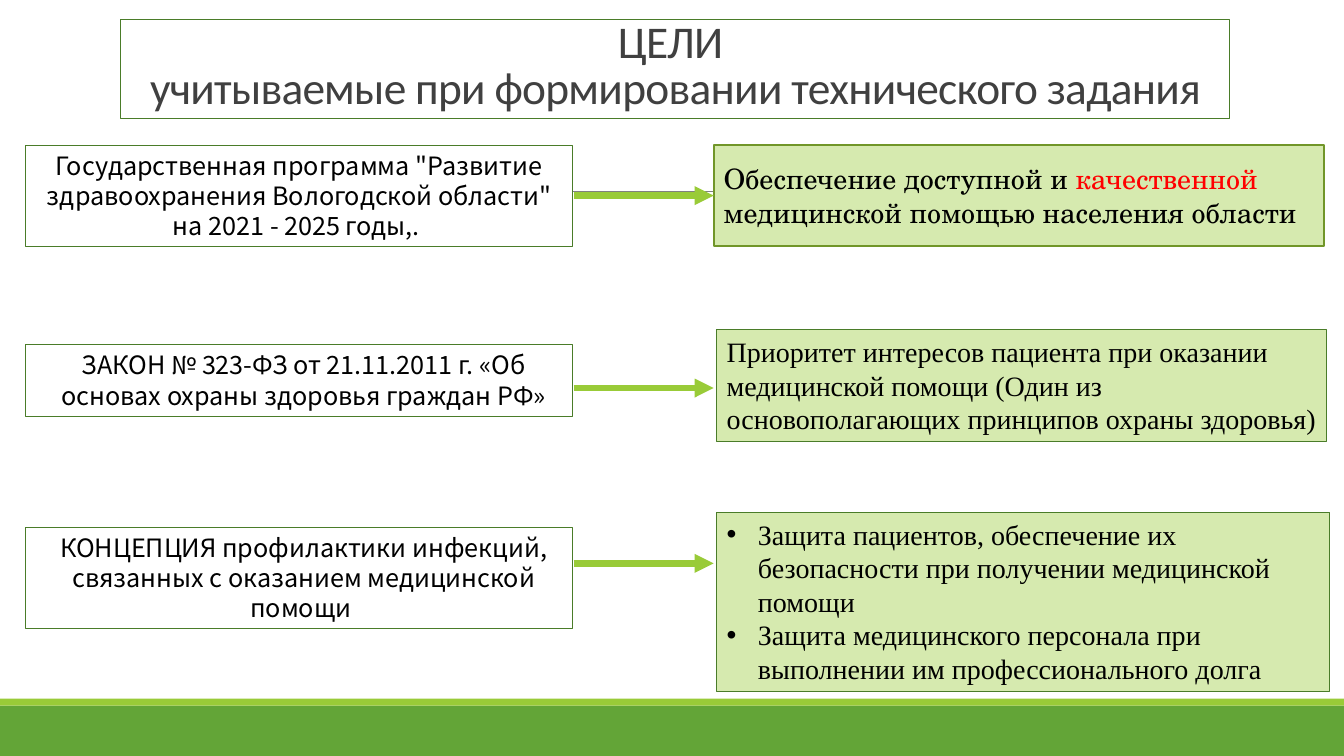
from pptx import Presentation, util as u
from pptx.dml.color import RGBColor
from pptx.enum import shapes, text
from pptx.oxml.ns import qn
from lxml import etree

GREEN = RGBColor(0x63, 0xA5, 0x37)
LIME = RGBColor(0x99, 0xCB, 0x38)
PALE = RGBColor(0xD6, 0xEA, 0xAF)
EDGE = RGBColor(0x4A, 0x7C, 0x29)
OLIVE = RGBColor(0x71, 0x96, 0x29)
GRAY = RGBColor(0x80, 0x80, 0x80)
DARK = RGBColor(0x40, 0x40, 0x40)
WHITE = RGBColor(0xFF, 0xFF, 0xFF)
BLACK = RGBColor(0, 0, 0)
RED = RGBColor(0xFF, 0, 0)

MID = text.MSO_ANCHOR.MIDDLE
TOP = text.MSO_ANCHOR.TOP
LOW = text.MSO_ANCHOR.BOTTOM
CENTER = text.PP_ALIGN.CENTER
LEFT = text.PP_ALIGN.LEFT

HEAD = {"name": "Calibri", "size": u.Pt(32.4)}
SANS = {"name": "Noto Sans CJK KR", "size": u.Pt(18)}
SERIF = {"name": "Times New Roman", "size": u.Pt(20)}
SCHOOL = {"name": "TeX Gyre Schola", "size": u.Pt(20)}
BREAK = (None, None)


class Page:
    """Draws styled elements on one slide, placed in percent of its size."""

    def __init__(self, deck):
        self.wide, self.high = deck.slide_width, deck.slide_height
        self.slide = deck.slides.add_slide(deck.slide_layouts[5])

    def x(self, share):
        return round(self.wide * share / 100)

    def y(self, share):
        return round(self.high * share / 100)

    def place(self, left, top, wide, high):
        return self.x(left), self.y(top), self.x(wide), self.y(high)

    def paint(self, shape, fill, edge, width):
        if fill is None:
            shape.fill.background()
        else:
            shape.fill.solid()
            shape.fill.fore_color.rgb = fill
        if edge is None:
            shape.line.fill.background()
        else:
            shape.line.color.rgb = edge
            shape.line.width = u.Pt(width)

    def label(self, shape, paras, font, align=LEFT, anchor=TOP):
        frame = shape.text_frame
        look = {"word_wrap": True, "auto_size": text.MSO_AUTO_SIZE.NONE, "vertical_anchor": anchor}
        for key, value in look.items():
            setattr(frame, key, value)
        for i, runs in enumerate(paras):
            para = frame.add_paragraph() if i else frame.paragraphs[0]
            para.alignment = align
            for words, color in runs:
                if words is None:
                    para.add_line_break()
                    continue
                run = para.add_run()
                run.text = words
                for key, value in font.items():
                    setattr(run.font, key, value)
                run.font.color.rgb = color
        return frame.paragraphs

    def title(self, box, runs):
        shape = self.slide.shapes.title
        for key, value in zip(("left", "top", "width", "height"), self.place(*box)):
            setattr(shape, key, value)
        self.paint(shape, None, EDGE, 0.75)
        para = self.label(shape, [runs], HEAD, CENTER, LOW)[0]
        para.line_spacing = 0.85
        for run in para.runs:
            run._r.get_or_add_rPr().set("spc", "-50")

    def box(self, box, fill=None, edge=None, width=0.75):
        shape = self.slide.shapes.add_shape(shapes.MSO_SHAPE.RECTANGLE, *self.place(*box))
        shape.shadow.inherit = False
        self.paint(shape, fill, edge, width)
        return shape

    def line(self, start, end, row, color, width, arrow=False):
        link = self.slide.shapes.add_connector(
            shapes.MSO_CONNECTOR.STRAIGHT, self.x(start), self.y(row), self.x(end), self.y(row))
        link.line.color.rgb = color
        link.line.width = u.Pt(width)
        props = link._element.spPr
        if arrow:
            etree.SubElement(props.find(qn("a:ln")), qn("a:tailEnd"), type="triangle")
        etree.SubElement(props, qn("a:effectLst"))

    def indent(self, para, left, first=0, mark=None):
        props = para._p.get_or_add_pPr()
        props.set("marL", str(u.Inches(left)))
        props.set("indent", str(u.Inches(first)))
        if mark:
            etree.SubElement(props, qn("a:buFont"), typeface="Arial")
            etree.SubElement(props, qn("a:buChar"), char=mark)


def main():
    deck = Presentation()
    deck.slide_width, deck.slide_height = u.Inches(13.33), u.Inches(7.5)
    page = Page(deck)

    page.box((0, 93.33, 100, 6.67), GREEN)
    page.box((0, 92.4, 100, 0.93), LIME)
    page.line(9.83, 91.6, 25.33, GRAY, 0.5)
    page.title((9, 2.53, 82.5, 13.2), [
        ("ЦЕЛИ ", DARK), BREAK, ("учитываемые при формировании технического задания", DARK)])

    sources = [
        (19.2, 13.47, WHITE, 0, "Государственная программа \"Развитие здравоохранения "
         "Вологодской области\" на 2021 - 2025 годы,. "),
        (45.6, 9.47, None, 0.09, "ЗАКОН № 323-ФЗ от 21.11.2011 г. «Об основах охраны здоровья граждан РФ»"),
        (69.73, 13.47, None, 0.09, "КОНЦЕПЦИЯ профилактики инфекций, связанных с оказанием "
         "медицинской помощи "),
    ]
    for top, high, fill, left, words in sources:
        shape = page.box((1.88, top, 40.75, high), fill, EDGE)
        para = page.label(shape, [[(words, BLACK)]], SANS, CENTER)[0]
        page.indent(para, left)

    care = [[("Обеспечение доступной и ", BLACK), ("качественной ", RED),
             ("медицинской помощью населения области", BLACK)]]
    first = [[("Приоритет интересов пациента при оказании медицинской помощи "
               "(Один из основополагающих принципов охраны здоровья)", BLACK)]]
    guard = [[("Защита пациентов, обеспечение их безопасности при получении медицинской помощи", BLACK)],
             [("Защита медицинского персонала при выполнении им профессионального долга", BLACK)]]
    goals = [
        ((53.1, 19.2, 45.4, 13.33), OLIVE, 1.25, care, SCHOOL, MID, None),
        ((53.33, 43.6, 45.4, 14.8), EDGE, 0.75, first, SERIF, TOP, None),
        ((53.33, 67.73, 45.6, 23.73), EDGE, 0.75, guard, SERIF, TOP, "•"),
    ]
    for area, edge, width, paras, font, anchor, mark in goals:
        shape = page.box(area, PALE, edge, width)
        for para in page.label(shape, paras, font, LEFT, anchor):
            if mark:
                page.indent(para, 0.31, -0.31, mark)

    for row in (25.87, 51.33, 74.53):
        page.line(42.68, 53.1, row, LIME, 4.5, True)

    deck.save("out.pptx")


if __name__ == "__main__":
    main()
